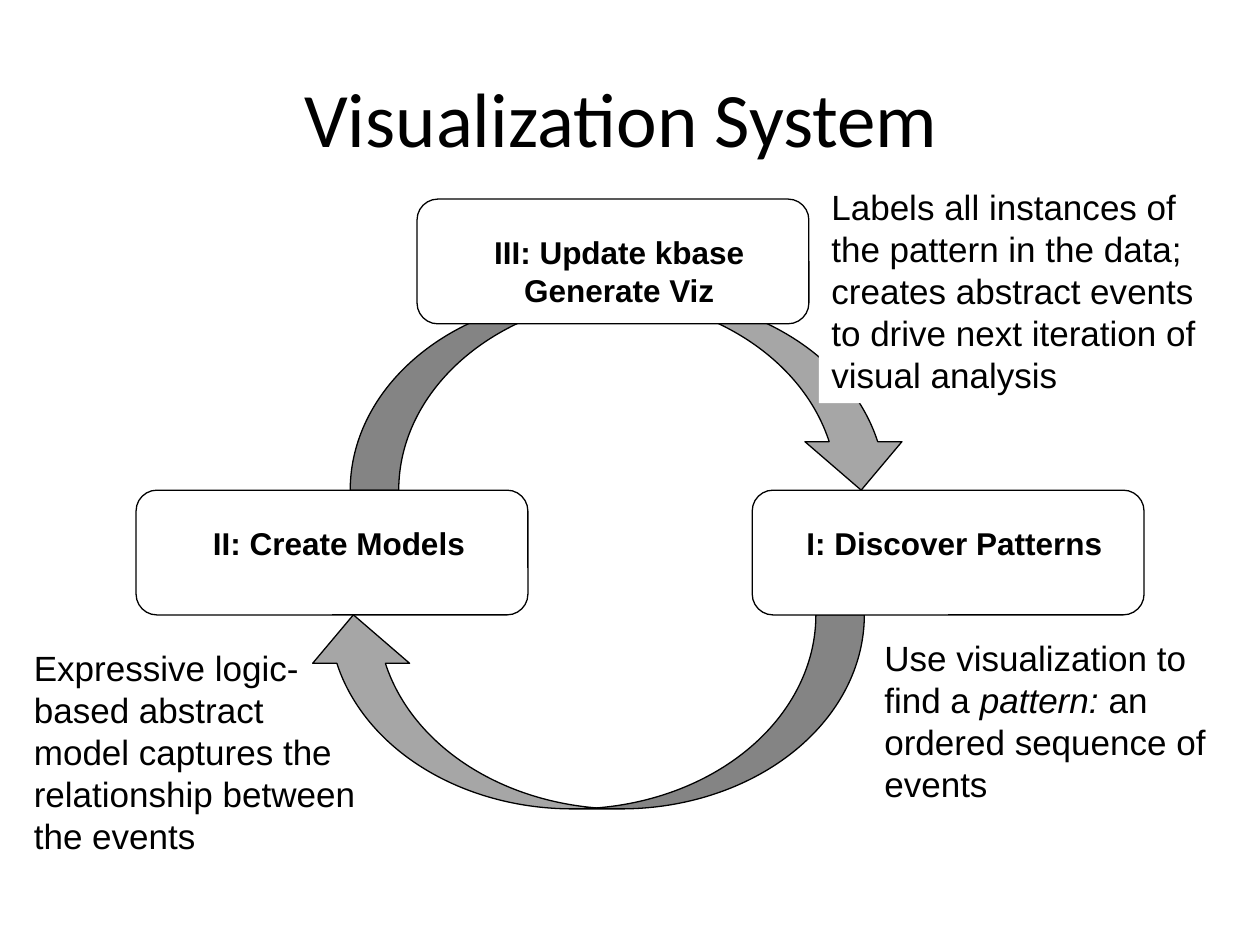
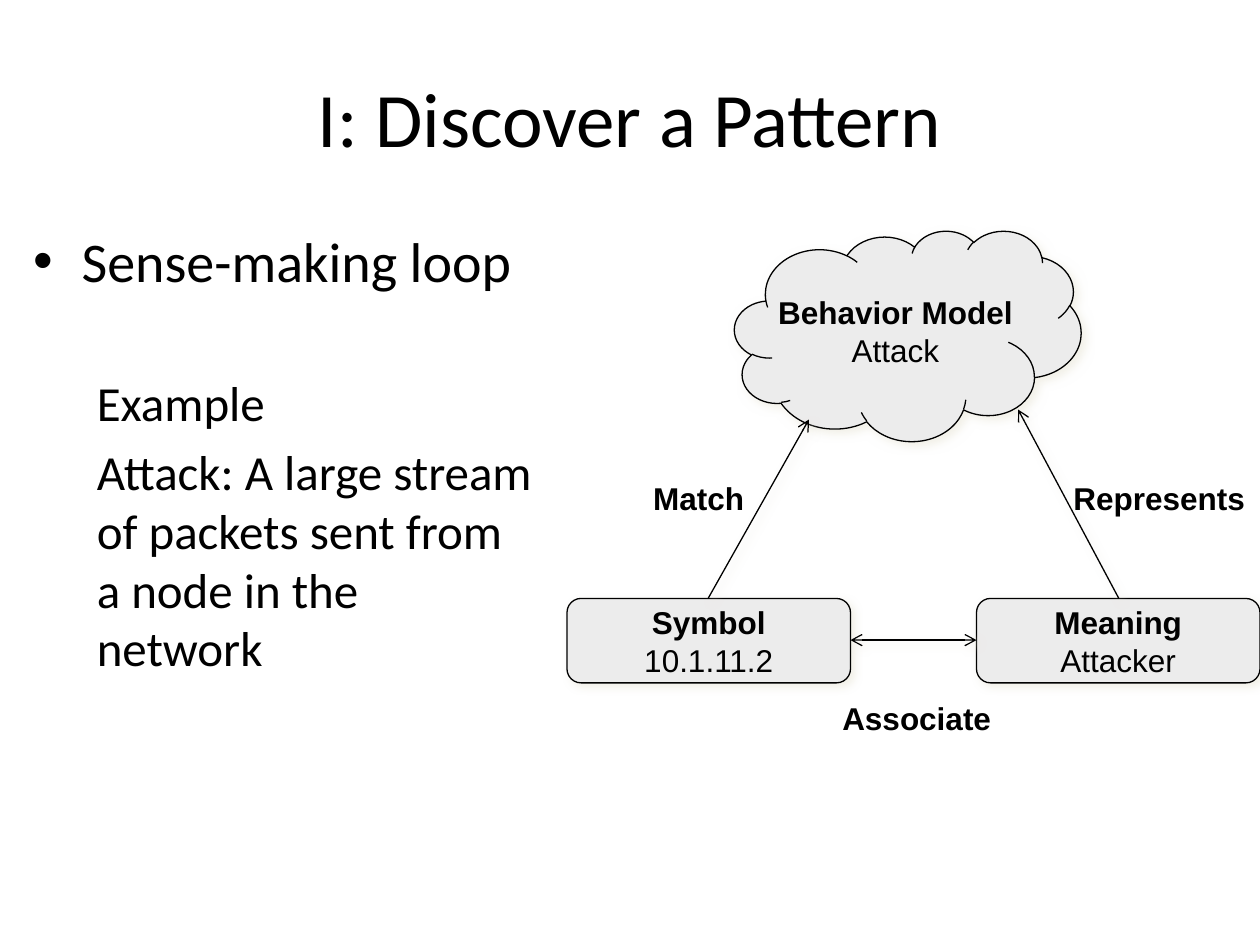
from lxml import etree
from pptx import Presentation
from pptx.dml.color import RGBColor
from pptx.enum import shapes, text
from pptx.oxml import ns
from pptx.util import Inches, Pt

# Shared style
COLORS = {"ink": "000000", "paper": "FFFFFF", "arrow": "A6A6A6",
          "node": "ECECEC", "shadow": "EEECE1"}
TITLE_BOX = (0.5, 0.3, 9, 1.25)
SHAPE = shapes.MSO_SHAPE
CENTER = text.PP_ALIGN.CENTER
MIDDLE = text.MSO_ANCHOR.MIDDLE

# Slide 1 content: a run is (text, style), where style holds b and/or i
CYCLE_TITLE = "Visualization System "
CYCLE_ARROWS = [((4.23, 0.9), 270), ((3.87, 3.43), 90)]
ARROW_SIZE = (1.54, 4.44)
STEP_SIZE = (3.11, 0.99)
LABEL_DROP = 0.22
STEPS = [  # box corner, label left, label size, lines
    ((5.97, 3.89), 6.29, (2.57, 0.4), ["I: Discover Patterns"]),
    ((1.08, 3.89), 1.58, (2.22, 0.4), ["II: Create Models"]),
    ((3.31, 1.58), 3.81, (2.21, 0.71), ["III: Update kbase", "Generate Viz"]),
]
NOTES = [  # place, fill, paragraphs
    ((6.92, 5, 2.92, 1.45), None,
     [[("Use visualization to find a ", ""), ("pattern: ", "i"),
       ("an ordered sequence of events", "")]]),
    ((0.17, 5.08, 2.92, 1.78), None,
     ["Expressive logic-based abstract",
      "model captures the relationship between the events"]),
    ((6.5, 1.42, 3.33, 1.78), "paper",
     ["Labels all instances of the pattern in the data; creates abstract "
      "events to drive next iteration of visual analysis"]),
]

# Slide 2 content
LOOP_TITLE = "I: Discover a Pattern"
BODY_BOX = (0.17, 1.75, 4.17, 4.95)
BODY = [  # text, size, left indent, first line indent, space before, bullet
    ("Sense-making loop", 32, 0.38, -0.38, 0, "•"),
    ("Example", 28, 0.5, 0, 45, None),
    ("Attack: A large stream of packets sent from a node in the network",
     28, 0.5, 0, 5.6, None),
]
NODES = [
    (SHAPE.CLOUD, (5.83, 1.83, 2.75, 1.67), "Behavior Model", "Attack"),
    (SHAPE.ROUNDED_RECTANGLE, (4.5, 4.75, 2.25, 0.67), "Symbol", "10.1.11.2"),
    (SHAPE.ROUNDED_RECTANGLE, (7.75, 4.75, 2.25, 0.67), "Meaning", "Attacker"),
]
LINKS = [  # from, to, ends with an arrowhead
    ((5.62, 4.75), (6.42, 3.33), ["tailEnd"]),
    ((8.88, 4.75), (8.08, 3.25), ["tailEnd"]),
    ((7.75, 5.08), (6.75, 5.08), ["headEnd", "tailEnd"]),
]
LINK_LABELS = [("Associate", (6.58, 5.5, 1.39, 0.4)),
               ("Match", (5.08, 3.75, 0.93, 0.4)),
               ("Represents", (8.4, 3.75, 1.6, 0.4))]


def color(name):
    return RGBColor.from_string(COLORS[name])


def inches(values):
    return [Inches(v) for v in values]


def add_text(sp, paragraphs, size=18, font="Arial", style="", align=None,
             anchor=text.MSO_ANCHOR.TOP, wrap=True):
    """Fill a shape with paragraphs, each a string or a list of runs."""
    tf = sp.text_frame
    tf.word_wrap = wrap
    tf.vertical_anchor = anchor
    for i, runs in enumerate(paragraphs):
        p = tf.add_paragraph() if i else tf.paragraphs[0]
        p.alignment = align
        for words, flags in [(runs, style)] if isinstance(runs, str) else runs:
            r = p.add_run()
            r.text = words
            r.font.name, r.font.size = font, Pt(size)
            r.font.bold, r.font.italic = "b" in flags, "i" in flags
            r.font.color.rgb = color("ink")
    return tf


def add_box(s, place):
    return s.shapes.add_textbox(*inches(place))


def add_figure(s, kind, place, fill, outline=True):
    sp = s.shapes.add_shape(kind, *inches(place))
    sp.shadow.inherit = False
    sp.fill.solid()
    sp.fill.fore_color.rgb = color(fill)
    if outline:
        set_line(sp)
    else:
        sp.line.fill.background()
    return sp


def set_line(sp):
    sp.line.color.rgb = color("ink")
    sp.line.width = Pt(0.75)


def add_shadow(sp):
    props = sp._element.spPr
    for old in props.findall(ns.qn("a:effectLst")):
        props.remove(old)
    effects = etree.SubElement(props, ns.qn("a:effectLst"))
    shadow = etree.SubElement(effects, ns.qn("a:outerShdw"), blurRad=str(Pt(5)),
                              dist=str(Pt(3)), dir=str(45 * 60000))
    tint = etree.SubElement(shadow, ns.qn("a:srgbClr"), val=COLORS["shadow"])
    etree.SubElement(tint, ns.qn("a:alpha"), val="75000")


def add_link(s, start, end, heads):
    c = s.shapes.add_connector(shapes.MSO_CONNECTOR.STRAIGHT,
                               *inches(start + end))
    set_line(c)
    for head in heads:
        etree.SubElement(c.line._get_or_add_ln(), ns.qn("a:" + head), type="arrow")
    add_shadow(c)


def add_slide(prs, title):
    s = prs.slides.add_slide(prs.slide_layouts[6])
    add_text(add_box(s, TITLE_BOX), [title], size=44, font="Calibri",
             align=CENTER, anchor=MIDDLE)
    return s


def build_cycle(prs):
    s = add_slide(prs, CYCLE_TITLE)
    for corner, turn in CYCLE_ARROWS:
        add_figure(s, SHAPE.CURVED_LEFT_ARROW, corner + ARROW_SIZE,
                   "arrow").rotation = turn
    # Steps with their labels
    for corner, left, size, lines in STEPS:
        add_figure(s, SHAPE.ROUNDED_RECTANGLE, corner + STEP_SIZE, "paper")
        label = add_figure(s, SHAPE.RECTANGLE,
                           (left, corner[1] + LABEL_DROP) + size, "paper",
                           outline=False)
        add_text(label, lines, style="b", align=CENTER, wrap=False)
    # Explanations beside the steps
    for place, fill, paragraphs in NOTES:
        sp = add_box(s, place)
        if fill:
            sp.fill.solid()
            sp.fill.fore_color.rgb = color(fill)
        add_text(sp, paragraphs, size=20)


def build_loop(prs):
    s = add_slide(prs, LOOP_TITLE)
    # Body text
    tf = add_text(add_box(s, BODY_BOX), [row[0] for row in BODY], font="Calibri")
    for p, (_, size, left, first, before, bullet) in zip(tf.paragraphs, BODY):
        props = p._p.get_or_add_pPr()
        props.set("marL", str(Inches(left)))
        props.set("indent", str(Inches(first)))
        if bullet:
            etree.SubElement(props, ns.qn("a:buFont"), typeface="Arial")
            etree.SubElement(props, ns.qn("a:buChar"), char=bullet)
        p.space_before = Pt(before)
        p.runs[0].font.size = Pt(size)
    # Diagram
    for kind, place, name, example in NODES:
        sp = add_figure(s, kind, place, "node")
        add_shadow(sp)
        add_text(sp, [[(name, "b")], example], align=CENTER, anchor=MIDDLE,
                 wrap=False)
    for link in LINKS:
        add_link(s, *link)
    for label, place in LINK_LABELS:
        add_text(add_box(s, place), [label], style="b", align=CENTER, wrap=False)


def main():
    prs = Presentation()
    prs.slide_width, prs.slide_height = Inches(10), Inches(7.5)
    build_cycle(prs)
    build_loop(prs)
    prs.save("out.pptx")


if __name__ == "__main__":
    main()
